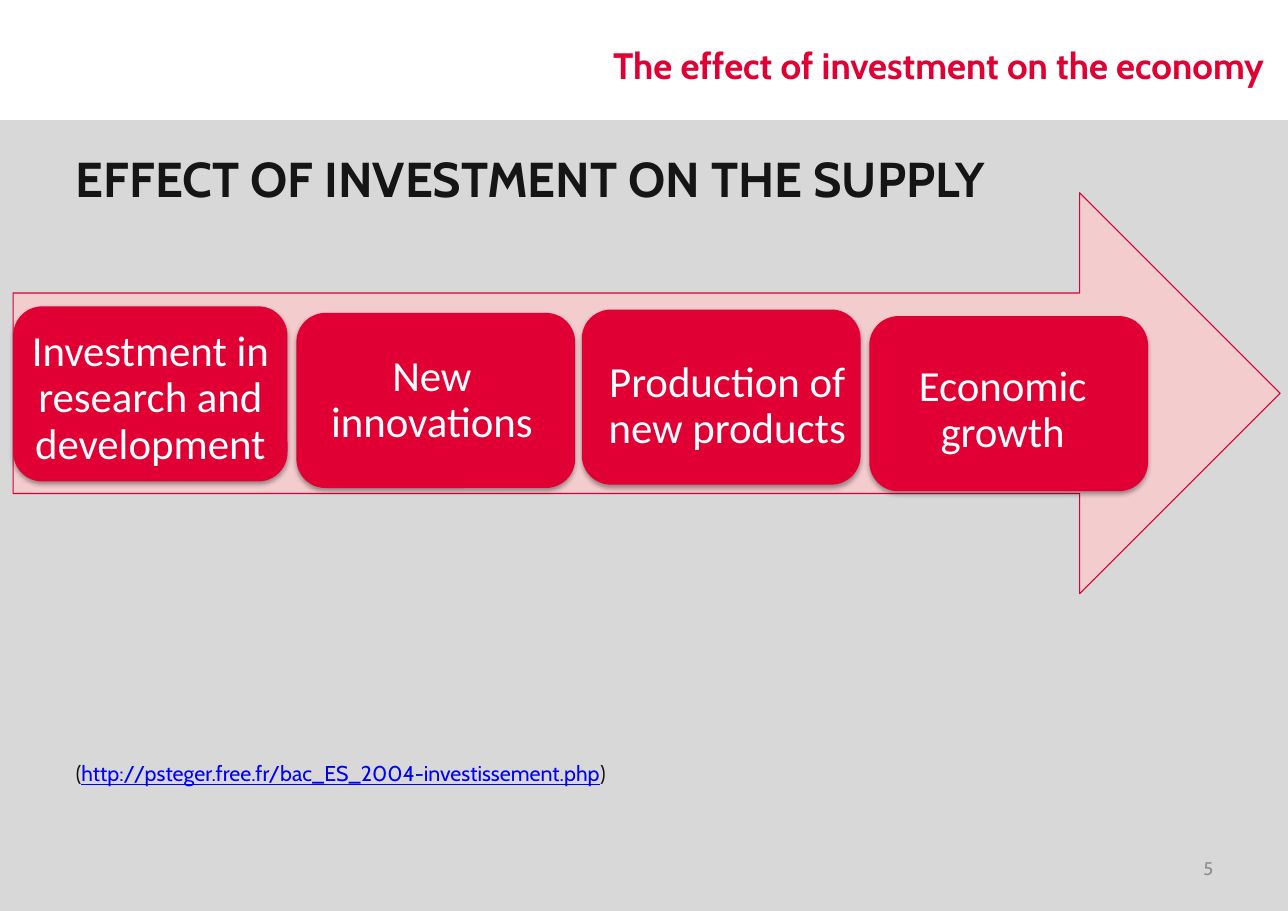
from dataclasses import dataclass

from lxml import etree
from pptx import Presentation
from pptx import util as u
from pptx.dml.color import RGBColor
from pptx.enum import shapes, text
from pptx.oxml import ns

Pt = u.Pt


@dataclass(frozen=True)
class Theme:
    """Colours, fonts and type sizes of the slide."""
    red: str = "E00034"
    arrow_line: str = "DB0033"
    pink: str = "F3CCCE"
    panel: str = "D8D8D8"
    ink: str = "151515"
    grey: str = "8C8C8C"
    link: str = "0000FF"
    white: str = "FFFFFF"
    shadow: str = "000000"
    font: str = "Cabin"
    step_font: str = "Calibri"
    title: int = 24
    heading: int = 32
    step: int = 28
    source: int = 14
    number: int = 12


T = Theme()


def rgb(color):
    """Turn a hex string into a colour."""
    return RGBColor.from_string(color)


def add_run(p, words, size, color, font=T.font, bold=False, underline=False):
    """Append one formatted run to a paragraph."""
    r = p.add_run()
    r.text = words
    r.font.name, r.font.size = font, Pt(size)
    r.font.bold, r.font.underline = bold, underline
    r.font.color.rgb = rgb(color)


def add_text(s, box, align=text.PP_ALIGN.LEFT, anchor=text.MSO_ANCHOR.TOP):
    """Add a wrapping text box and return its first paragraph."""
    tf = s.shapes.add_textbox(*map(Pt, box)).text_frame
    tf.word_wrap = True
    tf.vertical_anchor = anchor
    p = tf.paragraphs[0]
    p.alignment = align
    return p


def add_shape(s, kind, box, fill, line=None):
    """Add a flat filled shape with an optional thin outline."""
    sp = s.shapes.add_shape(kind, *map(Pt, box))
    sp.shadow.inherit = False
    sp.fill.solid()
    sp.fill.fore_color.rgb = rgb(fill)
    if line:
        sp.line.color.rgb = rgb(line)
        sp.line.width = Pt(0.75)
    else:
        sp.line.fill.background()
    return sp


def add_shadow(sp):
    """Give a shape a soft shadow straight below it."""
    effects = sp._element.spPr.find(ns.qn("a:effectLst"))
    outer = etree.SubElement(effects, ns.qn("a:outerShdw"), blurRad=str(Pt(3.1)),
                             dist=str(Pt(1.8)), dir="5400000", rotWithShape="0")
    color = etree.SubElement(outer, ns.qn("a:srgbClr"), val=T.shadow)
    etree.SubElement(color, ns.qn("a:alpha"), val="35000")


def add_step(s, words, box, margins):
    """Add one rounded step of the process with its label."""
    sp = add_shape(s, shapes.MSO_SHAPE.ROUNDED_RECTANGLE, box, T.red)
    add_shadow(sp)
    tf = sp.text_frame
    tf.word_wrap = True
    tf.vertical_anchor = text.MSO_ANCHOR.MIDDLE
    tf.margin_left, tf.margin_top, tf.margin_right, tf.margin_bottom = map(Pt, margins)
    p = tf.paragraphs[0]
    p.alignment = text.PP_ALIGN.CENTER
    p.line_spacing = 0.9
    add_run(p, words, T.step, T.white, T.step_font)


def main():
    """Build the slide and save it."""
    prs = Presentation()
    prs.slide_width, prs.slide_height = Pt(841.68), Pt(595.44)
    s = prs.slides.add_slide(prs.slide_layouts[6])
    right, middle = text.PP_ALIGN.RIGHT, text.MSO_ANCHOR.MIDDLE

    add_shape(s, shapes.MSO_SHAPE.RECTANGLE, (0, 78.5, 841.68, 516.94), T.panel)
    p = add_text(s, (238.3, 16.6, 594.7, 51.8), right, middle)
    add_run(p, "The effect of investment on the economy", T.title, T.red, bold=True)
    p = add_text(s, (42.5, 93.6, 757.4, 46))
    add_run(p, "EFFECT OF INVESTMENT ON THE SUPPLY", T.heading, T.ink, bold=True)
    p = add_text(s, (42.5, 493.5, 757.4, 25))
    add_run(p, "(", T.source, T.ink)
    add_run(p, "http://psteger.free.fr/bac_ES_2004-investissement.php",
            T.source, T.link, underline=True)
    add_run(p, ")", T.source, T.ink)
    p = add_text(s, (603.4, 551.5, 196.6, 31.7), right, middle)
    add_run(p, "5", T.number, T.grey)

    add_shape(s, shapes.MSO_SHAPE.RIGHT_ARROW, (8.6, 126, 828, 262.1), T.pink, T.arrow_line)
    steps = (
        ("Investment in research and development", 8.6, 200.2, 179.3, (3, 11.7, 3, 5.2)),
        ("New innovations", 193.7, 204.5, 182.2, (5.2, 8.8, 10.2, 8.1)),
        ("Production of new products", 380.2, 202.3, 182.2, (11.7, 14.6, 3.8, 2.3)),
        ("Economic growth", 568.1, 206.6, 182.2, (3.8, 13.1, 11.7, 3.8)),
    )
    for words, left, top, width, margins in steps:
        add_step(s, words, (left, top, width, 114.5), margins)

    prs.save("out.pptx")


if __name__ == "__main__":
    main()
